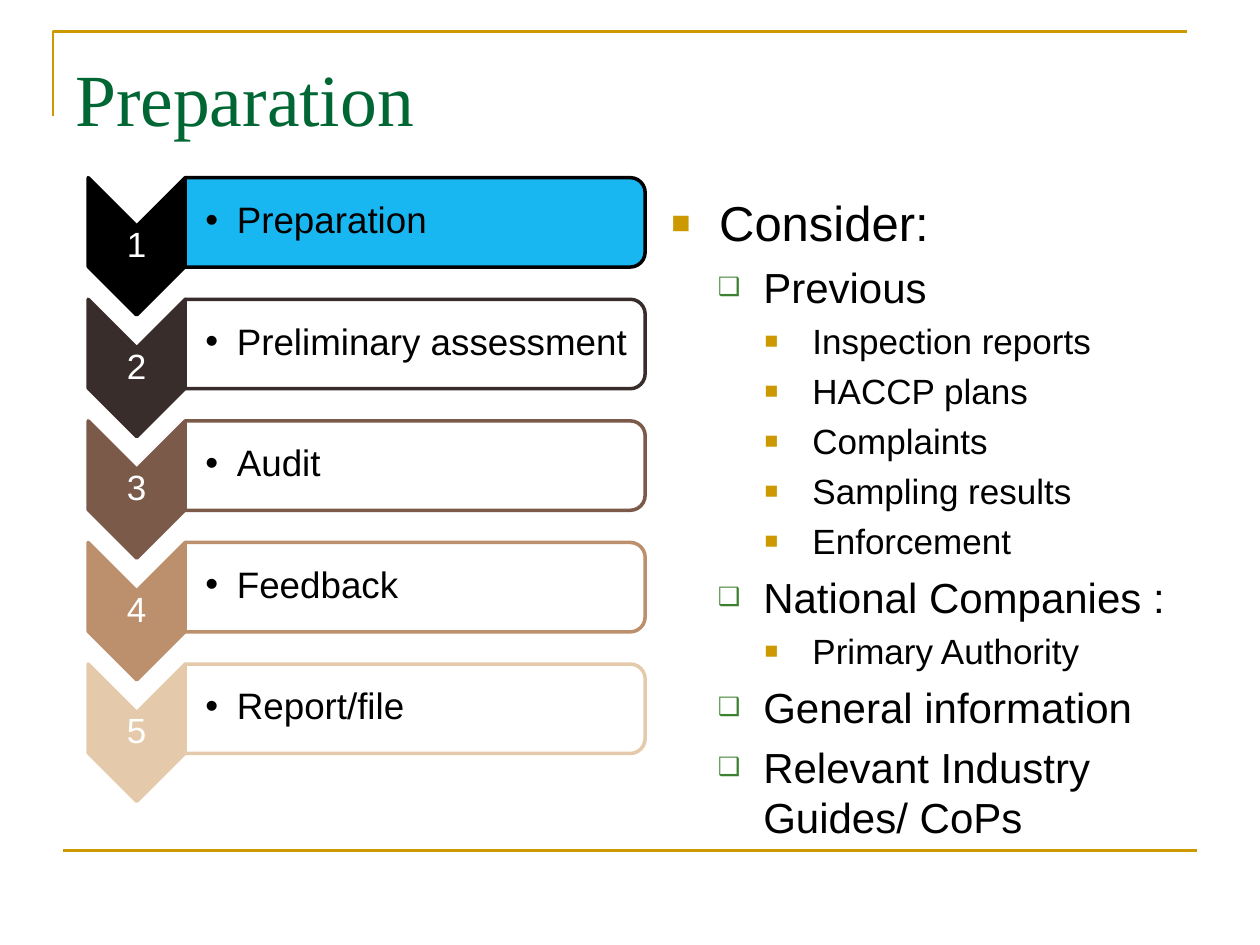
from lxml.etree import SubElement
from pptx import Presentation
from pptx.dml.color import RGBColor
from pptx.enum.shapes import MSO_CONNECTOR, MSO_SHAPE
from pptx.enum.text import MSO_ANCHOR, PP_ALIGN
from pptx.oxml.ns import qn
from pptx.util import Inches, Pt

COLORS = {
    "gold": "CC9900",
    "title": "006633",
    "green": "3B812F",
    "text": "000000",
    "white": "FFFFFF",
    "current": "00B0F0",
}
STEPS = [
    ("Preparation", "000000"),
    ("Preliminary assessment", "392D2B"),
    ("Audit", "7C5A4A"),
    ("Feedback", "BC906D"),
    ("Report/file", "E4CAAB"),
]
STEP_PITCH = 0.965
LEVELS = [
    {"size": 28, "left": 0.38, "hang": 0.38, "bullet": ("■", "gold", 65)},
    {"size": 24, "left": 0.73, "hang": 0.36, "bullet": ("❑", "green", 60)},
    {"size": 20, "left": 1.12, "hang": 0.38, "bullet": ("■", "gold", 65)},
]
CONSIDERATIONS = [
    (0, "Consider:"),
    (1, "Previous"),
    (2, "Inspection reports"),
    (2, "HACCP plans"),
    (2, "Complaints"),
    (2, "Sampling results"),
    (2, "Enforcement"),
    (1, "National Companies :"),
    (2, "Primary Authority"),
    (1, "General information"),
    (1, "Relevant Industry Guides/ CoPs"),
]


def rgb(value):
    return RGBColor.from_string(value)


def add_text_frame(slide, box, insets=(0.1, 0.05, 0.1, 0.05), anchor=MSO_ANCHOR.TOP):
    frame = slide.shapes.add_textbox(*map(Inches, box)).text_frame
    frame.word_wrap = True
    frame.vertical_anchor = anchor
    frame.margin_left, frame.margin_top, frame.margin_right, frame.margin_bottom = map(Inches, insets)
    return frame


def add_run(paragraph, text, size, color="text", font="Arial"):
    run = paragraph.add_run()
    run.text = text
    run.font.size = Pt(size)
    run.font.name = font
    run.font.color.rgb = rgb(COLORS[color])


def set_bullet(paragraph, left, hang, bullet):
    character, color, percent = bullet
    properties = paragraph._p.get_or_add_pPr()
    properties.set("marL", str(Inches(left)))
    properties.set("indent", str(-Inches(hang)))
    bullet_color = SubElement(properties, qn("a:buClr"))
    SubElement(bullet_color, qn("a:srgbClr"), val=COLORS[color])
    SubElement(properties, qn("a:buSzPct"), val=str(percent * 1000))
    SubElement(properties, qn("a:buFont"), typeface="Arial")
    SubElement(properties, qn("a:buChar"), char=character)


def add_rotated_shape(slide, kind, box, fill, line, opacity=100):
    shape = slide.shapes.add_shape(kind, *map(Inches, box))
    shape.rotation = 90
    shape.shadow.inherit = False
    shape.fill.solid()
    shape.fill.fore_color.rgb = rgb(fill)
    shape.line.color.rgb = rgb(line)
    shape.line.width = Pt(2)
    if opacity < 100:
        color = shape._element.spPr.find(qn("a:solidFill")).find(qn("a:srgbClr"))
        SubElement(color, qn("a:alpha"), val=str(opacity * 1000))


def add_frame_lines(slide):
    builder = slide.shapes.build_freeform(Inches(0.42), Inches(0.92))
    builder.add_line_segments(
        [(Inches(0.42), Inches(0.25)), (Inches(9.42), Inches(0.25))], close=False
    )
    corner = builder.convert_to_shape()
    corner.shadow.inherit = False
    corner.fill.background()
    footer = slide.shapes.add_connector(
        MSO_CONNECTOR.STRAIGHT, Inches(0.5), Inches(6.75), Inches(9.5), Inches(6.75)
    )
    SubElement(footer._element.spPr, qn("a:effectLst"))
    for shape in (corner, footer):
        shape.line.color.rgb = rgb(COLORS["gold"])
        shape.line.width = Pt(1.5)


def add_title(slide, text):
    frame = add_text_frame(slide, (0.5, 0.3, 9, 1.25), (0.1, 0.12, 0.1, 0.05))
    add_run(frame.paragraphs[0], text, 42, "title", "Times New Roman")


def add_considerations(slide):
    frame = add_text_frame(slide, (5.23, 1.48, 4.53, 4.95))
    for index, (level, text) in enumerate(CONSIDERATIONS):
        paragraph = frame.add_paragraph() if index else frame.paragraphs[0]
        style = LEVELS[level]
        paragraph.level = level
        paragraph.space_before = Pt(round(0.23 * style["size"], 1))
        set_bullet(paragraph, style["left"], style["hang"], style["bullet"])
        add_run(paragraph, text, style["size"])


def add_step(slide, index, label, color):
    offset = index * STEP_PITCH
    add_rotated_shape(slide, MSO_SHAPE.CHEVRON, (0.54, 1.57 + offset, 1.09, 0.77), color, color)
    number = add_text_frame(
        slide, (0.7, 1.79 + offset, 0.77, 0.33), (0.01,) * 4, MSO_ANCHOR.MIDDLE
    ).paragraphs[0]
    number.alignment = PP_ALIGN.CENTER
    number.line_spacing = 0.9
    add_run(number, str(index + 1), 20, "white")

    fill = COLORS["white" if index else "current"]
    box = (2.94, offset - 0.06, 0.71, 3.65)
    add_rotated_shape(slide, MSO_SHAPE.ROUND_2_SAME_RECTANGLE, box, fill, color, 90)
    caption = add_text_frame(
        slide, (1.47, 1.44 + offset, 3.62, 0.64), (0.16, 0.01, 0.01, 0.01), MSO_ANCHOR.MIDDLE
    ).paragraphs[0]
    caption.level = 1
    caption.line_spacing = 0.9
    set_bullet(caption, 0.25, 0.25, ("•", "text", 100))
    add_run(caption, label, 21)


def main():
    """Build the audit preparation slide and save it."""
    presentation = Presentation()
    presentation.slide_width = Inches(10)
    presentation.slide_height = Inches(7.5)
    slide = presentation.slides.add_slide(presentation.slide_layouts[6])
    add_frame_lines(slide)
    add_title(slide, "Preparation")
    add_considerations(slide)
    for index, (label, color) in enumerate(STEPS):
        add_step(slide, index, label, color)
    presentation.save("out.pptx")


if __name__ == "__main__":
    main()
